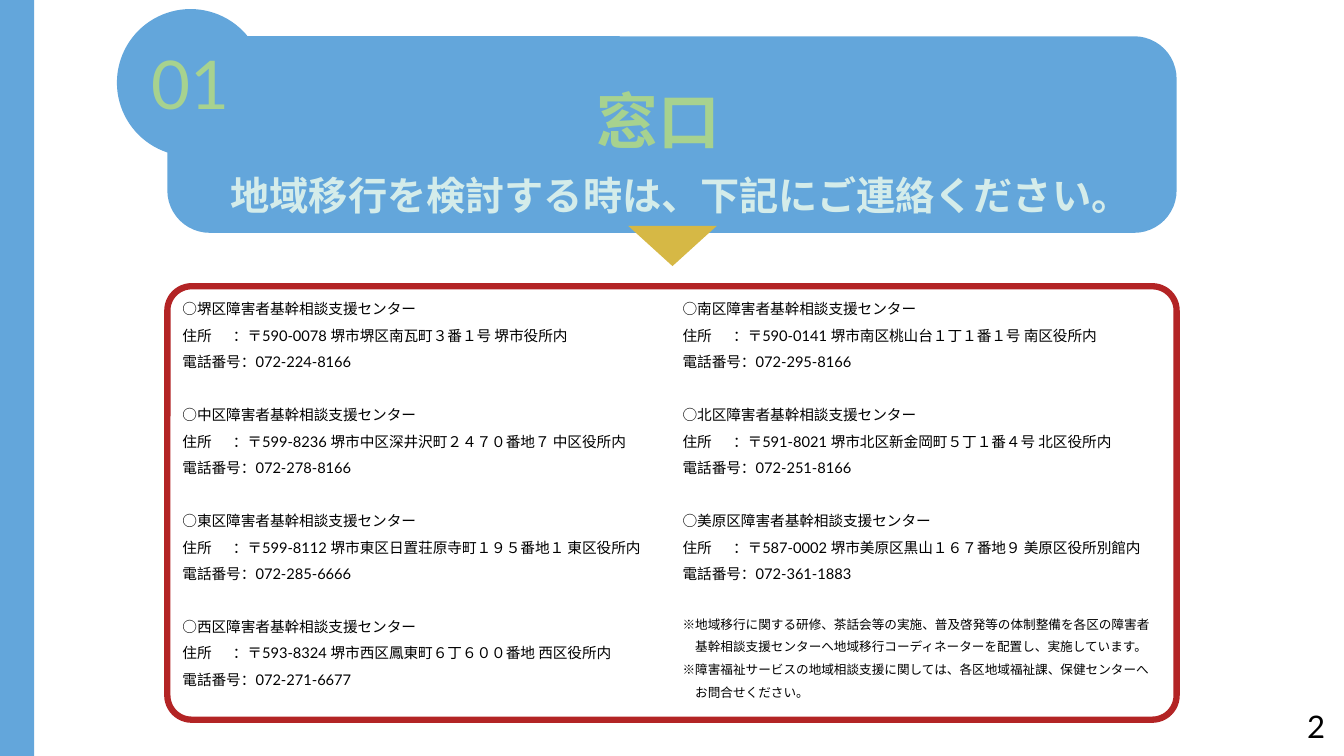
"""Build the slide that lists the consultation centres of each ward."""
import pptx
import pptx.util
import pptx.dml.color
import pptx.enum.shapes
import pptx.enum.text
import pptx.oxml.ns
import lxml.etree

Inches, Pt = pptx.util.Inches, pptx.util.Pt
KIND = pptx.enum.shapes.MSO_SHAPE
ALIGN = pptx.enum.text.PP_ALIGN
ANCHOR = pptx.enum.text.MSO_ANCHOR
FIT = pptx.enum.text.MSO_AUTO_SIZE
qn = pptx.oxml.ns.qn

LATIN, KANJI = "Lato", "Noto Sans CJK JP"
HUES = {"blue": "63A6DB", "green": "A7D28F", "white": "FFFFFF", "red": "B32425",
        "gold": "D6B845", "pale": "D4ECEA", "black": "000000"}


def tint(name):
    return pptx.dml.color.RGBColor.from_string(HUES[name])


def write(para, text, size, hue, face=LATIN, bold=False, **form):
    para.text = text
    form = {"space_before": Pt(0), "space_after": Pt(0), **form}
    for key, value in form.items():
        setattr(para, key, value)
    for run in para.runs:
        for key, value in {"size": Pt(size), "bold": bold, "name": face}.items():
            setattr(run.font, key, value)
        run.font.color.rgb = tint(hue)
        east = lxml.etree.SubElement(run.font._element, qn("a:ea"))
        east.set("typeface", KANJI)


prs = pptx.Presentation()
prs.slide_width, prs.slide_height = Inches(13.33), Inches(7.5)
slide = prs.slides.add_slide(prs.slide_layouts[3])
title, *lists = slide.placeholders

forms = {}
for name, kind, box, fill, curve in [
    ("banner", KIND.ROUNDED_RECTANGLE, (1.66, 0.36, 10.01, 1.95), "blue", 0.216),
    ("panel", KIND.ROUNDED_RECTANGLE, (1.66, 2.84, 10.01, 4.3), "white", 0.056),
    ("arrow", KIND.FLOWCHART_MERGE, (6.23, 2.24, 0.88, 0.4), "gold", None),
    ("badge", KIND.OVAL, (1.16, 0.09, 1.46, 1.46), "blue", None),
    ("stripe", KIND.RECTANGLE, (0, 0, 0.34, 7.5), "blue", None),
]:
    form = slide.shapes.add_shape(kind, *map(Inches, box))
    form.shadow.inherit = False
    form.fill.solid()
    form.fill.fore_color.rgb = tint(fill)
    form.line.fill.background()
    if curve:
        form.adjustments[0] = curve
    forms[name] = form
forms["panel"].line.color.rgb = tint("red")
forms["panel"].line.width = Pt(4.5)

badge = forms["badge"].text_frame
badge.vertical_anchor = ANCHOR.MIDDLE
write(badge.paragraphs[0], "01", 48, "green", alignment=ALIGN.CENTER)

for key, value in {"left": 3.28, "top": 0.72, "width": 6.5, "height": 0.98}.items():
    setattr(title, key, Inches(value))
title.text_frame.vertical_anchor = ANCHOR.MIDDLE
write(title.text_frame.paragraphs[0], "窓口", 44, "green", KANJI, True,
      alignment=ALIGN.CENTER, line_spacing=Pt(50))
forms["banner"].element.addnext(title.element)

lead = slide.shapes.add_textbox(*map(Inches, (2.19, 1.65, 9.13, 0.57)))
lead.text_frame.word_wrap = False
write(lead.text_frame.paragraphs[0], "地域移行を検討する時は、下記にご連絡ください。",
      28, "pale", bold=True, line_spacing=Pt(34))

page = slide.shapes.add_textbox(*map(Inches, (10.13, 7, 3.11, 0.4)))
page.text_frame.word_wrap = True
page.text_frame.vertical_anchor = ANCHOR.MIDDLE
write(page.text_frame.paragraphs[0], "2", 22.2, "black", alignment=ALIGN.RIGHT)

wards = [
    [("堺区", "590-0078 堺市堺区南瓦町３番１号 堺市役所内", "072-224-8166"),
     ("中区", "599-8236 堺市中区深井沢町２４７０番地７ 中区役所内", "072-278-8166"),
     ("東区", "599-8112 堺市東区日置荘原寺町１９５番地１ 東区役所内", "072-285-6666"),
     ("西区", "593-8324 堺市西区鳳東町６丁６００番地 西区役所内", "072-271-6677")],
    [("南区", "590-0141 堺市南区桃山台１丁１番１号 南区役所内", "072-295-8166"),
     ("北区", "591-8021 堺市北区新金岡町５丁１番４号 北区役所内", "072-251-8166"),
     ("美原区", "587-0002 堺市美原区黒山１６７番地９ 美原区役所別館内", "072-361-1883")],
]
notes = [
    "※地域移行に関する研修、茶話会等の実施、普及啓発等の体制整備を各区の障害者\v"
    "基幹相談支援センターへ地域移行コーディネーターを配置し、実施しています。",
    "※障害福祉サービスの地域相談支援に関しては、各区地域福祉課、保健センターへ\v"
    "お問合せください。",
]
SIZE, SMALL, PITCH = 10.5, 9, 1.8
GAP = SIZE * PITCH

for col, (body, group) in enumerate(zip(lists, wards)):
    box = {"left": 1.71 + 4.96 * col, "top": 2.84, "width": 4.96, "height": 4.2}
    for key, value in box.items():
        setattr(body, key, Inches(value))
    frame = body.text_frame
    frame.auto_size = FIT.NONE
    frame.vertical_anchor = ANCHOR.TOP
    rows = []
    for num, (ward, place, phone) in enumerate(group):
        rows += [(f"○{ward}障害者基幹相談支援センター", SIZE, GAP if num else 0),
                 (f"住所\t：〒{place}", SIZE, 0),
                 (f"電話番号：{phone}", SIZE, 0)]
    if col:
        rows += [(note, SMALL, 0 if num else GAP) for num, note in enumerate(notes)]
    for num, (text, size, space) in enumerate(rows):
        para = frame.add_paragraph() if num else frame.paragraphs[0]
        write(para, text, size, "black", space_before=Pt(space),
              line_spacing=Pt(size * PITCH), alignment=ALIGN.LEFT)
        props = para._p.get_or_add_pPr()
        hang = Pt(SMALL) if size == SMALL else 0
        props.set("marL", str(hang))
        props.set("indent", str(-hang))
        lxml.etree.SubElement(props, qn("a:buNone"))
        if "\t" in text:
            tabs = lxml.etree.SubElement(props, qn("a:tabLst"))
            stop = lxml.etree.SubElement(tabs, qn("a:tab"))
            stop.set("pos", str(Pt(4 * SIZE)))
            stop.set("algn", "l")
    forms["arrow"].element.addnext(body.element)

prs.save("out.pptx")
